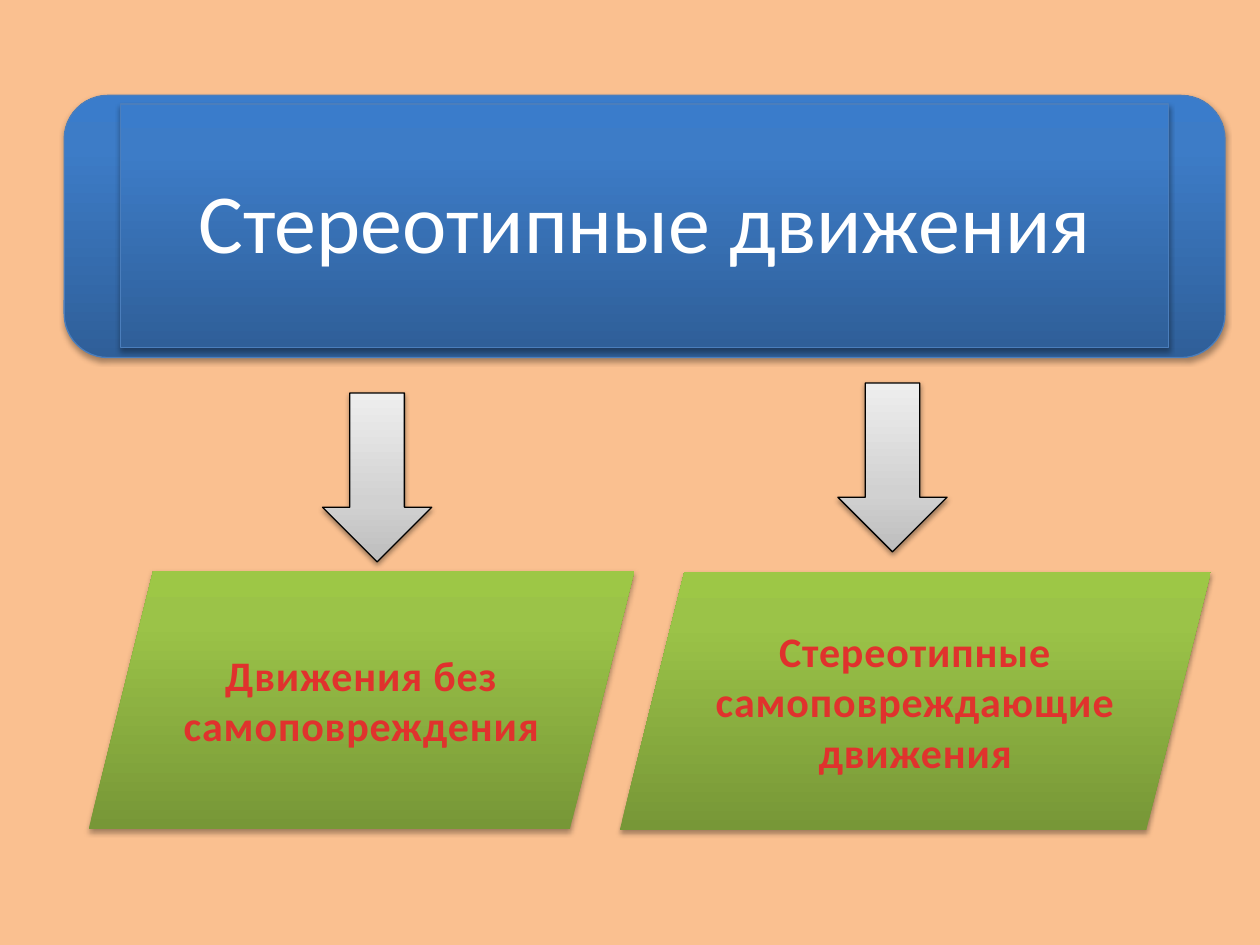
import copy
import pptx
import pptx.util
import pptx.dml.color
import pptx.enum.shapes
import pptx.enum.text
import pptx.oxml
import pptx.oxml.ns

Pt = pptx.util.Pt
KIND = pptx.enum.shapes.MSO_SHAPE
TEXT = pptx.enum.text
BLUE = [(0, "2F5F99"), (0.8, "3D7CC7"), (1, "3A7CCB")]
GREEN = [(0, "779737"), (0.8, "9BC348"), (1, "9DC746")]
GREY = [(0, "BDBDBD"), (0.35, "D1D1D1"), (1, "EEEEEE")]


def color(code):
    return pptx.dml.color.RGBColor.from_string(code)


def dress(shape, stops, edge, alpha=35, dist=1.8):
    """Give a shape a rising gradient, an outline and a soft shadow."""
    shape.fill.gradient()
    shape.fill.gradient_angle = 90
    props = shape._element.spPr
    marks = props.find(".//" + pptx.oxml.ns.qn("a:gsLst"))
    marks.append(copy.deepcopy(marks[-1]))
    for mark, (place, code) in zip(shape.fill.gradient_stops, stops):
        mark.position = place
        mark.color.rgb = color(code)
    if edge:
        shape.line.color.rgb = color(edge)
        shape.line.width = Pt(0.75)
    else:
        shape.line.fill.background()
    shape.shadow.inherit = False
    props.find(pptx.oxml.ns.qn("a:effectLst")).append(pptx.oxml.parse_xml(
        f'<a:outerShdw {pptx.oxml.ns.nsdecls("a")} blurRad="{Pt(3.1)}" '
        f'dist="{Pt(dist)}" dir="5400000" rotWithShape="0">'
        f'<a:srgbClr val="000000"><a:alpha val="{alpha * 1000}"/></a:srgbClr>'
        '</a:outerShdw>'))


# Slide and background
deck = pptx.Presentation()
deck.slide_width, deck.slide_height = Pt(720), Pt(540)
slide = deck.slides.add_slide(deck.slide_layouts[5])
slide.background.fill.solid()
slide.background.fill.fore_color.rgb = color("FAC090")
shapes = slide.shapes

# Rounded banner, set behind the title
banner = shapes.add_shape(KIND.ROUNDED_RECTANGLE,
                          Pt(36.7), Pt(54.5), Pt(663.3), Pt(149.8))
dress(banner, BLUE, "4B7EBC")
title = shapes.title
title._element.addprevious(banner._element)

# Title
spot = {"left": 69, "top": 59.5, "width": 598.8, "height": 139.2}
for name, value in spot.items():
    setattr(title, name, Pt(value))
dress(title, BLUE, "4B7EBC")
frame = title.text_frame
frame.text = "Стереотипные движения"
look = {"margin_left": Pt(10), "margin_right": Pt(10),
        "margin_top": Pt(5), "margin_bottom": Pt(5), "word_wrap": True,
        "auto_size": TEXT.MSO_AUTO_SIZE.NONE,
        "vertical_anchor": TEXT.MSO_ANCHOR.MIDDLE}
for name, value in look.items():
    setattr(frame, name, value)
para = frame.paragraphs[0]
para.alignment = TEXT.PP_ALIGN.CENTER
para.line_spacing = 0.9
font = para.runs[0].font
for name, value in {"name": "Calibri", "size": Pt(48)}.items():
    setattr(font, name, value)
font.color.rgb = color("FFFFFF")

# Two kinds of movement
kinds = [("Движения без самоповреждения", 50.7, 326.2, 311.8),
         ("Стереотипные самоповреждающие движения", 354.2, 326.8, 337.7)]
for words, left, top, width in kinds:
    box = shapes.add_shape(KIND.PARALLELOGRAM,
                           Pt(left), Pt(top), Pt(width), Pt(147.4))
    dress(box, GREEN, None)
    frame = box.text_frame
    frame.text = words
    frame.word_wrap = True
    frame.vertical_anchor = TEXT.MSO_ANCHOR.MIDDLE
    para = frame.paragraphs[0]
    para.alignment = TEXT.PP_ALIGN.CENTER
    font = para.runs[0].font
    for name, value in {"name": "Calibri", "size": Pt(24), "bold": True}.items():
        setattr(font, name, value)
    font.color.rgb = color("E0322D")
    para.runs[0]._r.get_or_add_rPr().set("spc", "50")

# Arrows from the banner to each kind
for left, top in [(184.3, 224.6), (478.8, 218.9)]:
    arrow = shapes.add_shape(KIND.DOWN_ARROW,
                             Pt(left), Pt(top), Pt(62.4), Pt(96.5))
    dress(arrow, GREY, "000000", 38, 1.6)

deck.save("out.pptx")
